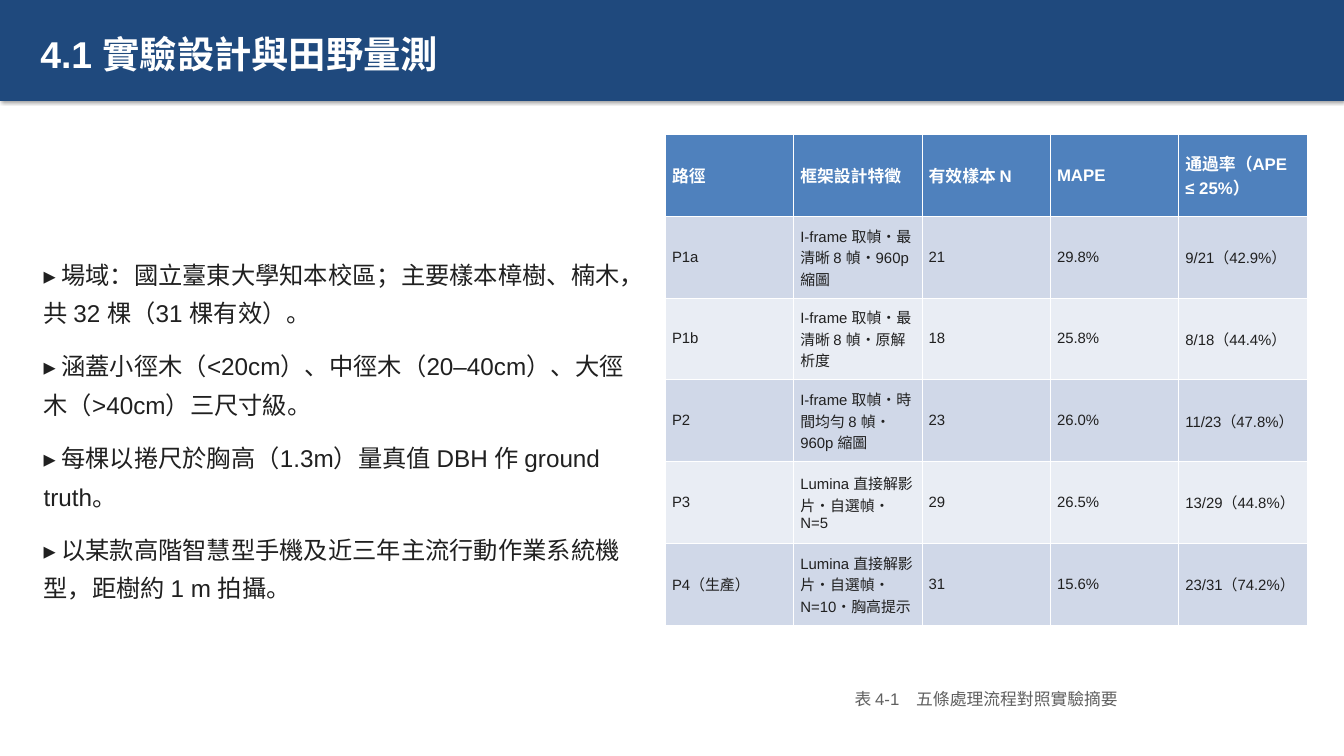
from lxml.etree import SubElement
from pptx import Presentation
from pptx.dml.color import RGBColor
from pptx.enum.text import MSO_ANCHOR, MSO_AUTO_SIZE, PP_ALIGN
from pptx.oxml.ns import qn
from pptx.util import Inches, Pt

NAVY, BLUE, WHITE = "1F497D", "4F81BD", "FFFFFF"
BANDS = ("D0D8E8", "E9EDF4")
INK, GRAY = "202020", "606060"

FINDINGS = [
    "▸ 場域：國立臺東大學知本校區；主要樣本樟樹、楠木，共 32 棵（31 棵有效）。",
    "▸ 涵蓋小徑木（<20cm）、中徑木（20–40cm）、大徑木（>40cm）三尺寸級。",
    "▸ 每棵以捲尺於胸高（1.3m）量真值 DBH 作 ground truth。",
    "▸ 以某款高階智慧型手機及近三年主流行動作業系統機型，距樹約 1 m 拍攝。",
]
PATHWAYS = [
    ("路徑", "框架設計特徵", "有效樣本 N", "MAPE", "通過率（APE ≤ 25%）"),
    ("P1a", "I-frame 取幀・最清晰 8 幀・960p 縮圖", "21", "29.8%", "9/21（42.9%）"),
    ("P1b", "I-frame 取幀・最清晰 8 幀・原解析度", "18", "25.8%", "8/18（44.4%）"),
    ("P2", "I-frame 取幀・時間均勻 8 幀・960p 縮圖", "23", "26.0%", "11/23（47.8%）"),
    ("P3", "Lumina 直接解影片・自選幀・N=5", "29", "26.5%", "13/29（44.8%）"),
    ("P4（生產）", "Lumina 直接解影片・自選幀・N=10・胸高提示", "31", "15.6%", "23/31（74.2%）"),
]


def rgb(value):
    return RGBColor.from_string(value)


class Deck:
    """Holds the text style and the current slide."""

    def __init__(self, width, height, font="Arial"):
        self.font = font
        self.presentation = Presentation()
        self.presentation.slide_width = Inches(width)
        self.presentation.slide_height = Inches(height)
        self.slide = self.presentation.slides.add_slide(self.presentation.slide_layouts[5])

    def style(self, paragraph, size, color, bold=False):
        paragraph.font.name = self.font
        paragraph.font.size = Pt(size)
        paragraph.font.color.rgb = rgb(color)
        paragraph.font.bold = bold

    def title(self, text, height):
        band = self.slide.shapes.title
        band.left, band.top = Inches(0), Inches(0)
        band.width, band.height = self.presentation.slide_width, Inches(height)
        band.fill.solid()
        band.fill.fore_color.rgb = rgb(NAVY)
        effects = SubElement(band.fill._xPr, qn("a:effectLst"))
        shadow = SubElement(effects, qn("a:outerShdw"), blurRad=str(Pt(3.1)),
                            dist=str(Pt(1.8)), dir="5400000", rotWithShape="0")
        shade = SubElement(shadow, qn("a:srgbClr"), val="000000")
        SubElement(shade, qn("a:alpha"), val="35000")
        frame = band.text_frame
        frame.text = text
        frame.auto_size = MSO_AUTO_SIZE.NONE
        frame.vertical_anchor = MSO_ANCHOR.MIDDLE
        frame.margin_left, frame.margin_top = Inches(0.6), Inches(0.15)
        frame.margin_right, frame.margin_bottom = Inches(0.1), Inches(0.05)
        heading = frame.paragraphs[0]
        heading.alignment = PP_ALIGN.LEFT
        self.style(heading, 40, WHITE, bold=True)

    def text(self, lines, left, top, width, height, size, color,
             anchor=MSO_ANCHOR.TOP, align=PP_ALIGN.LEFT, spacing=None, after=0):
        box = self.slide.shapes.add_textbox(Inches(left), Inches(top), Inches(width), Inches(height))
        frame = box.text_frame
        frame.word_wrap = True
        frame.vertical_anchor = anchor
        frame.text = "\n".join(lines)
        for paragraph in frame.paragraphs:
            paragraph.alignment = align
            paragraph.line_spacing = spacing
            paragraph.space_after = Pt(after)
            self.style(paragraph, size, color)

    def table(self, rows, left, top, width, height):
        grid = self.slide.shapes.add_table(
            len(rows), len(rows[0]), Inches(left), Inches(top), Inches(width), Inches(height)).table
        for r, row in enumerate(rows):
            header = r == 0
            for c, value in enumerate(row):
                cell = grid.cell(r, c)
                cell.text = value
                cell.vertical_anchor = MSO_ANCHOR.MIDDLE
                cell.fill.solid()
                cell.fill.fore_color.rgb = rgb(BLUE if header else BANDS[(r - 1) % 2])
                self.style(cell.text_frame.paragraphs[0], 18 if header else 16,
                           WHITE if header else INK, bold=header)


def main():
    deck = Deck(20, 11.25)
    deck.title("4.1 實驗設計與田野量測", 1.5)
    deck.text(FINDINGS, 0.55, 1.7, 8.95, 9.3, 26, INK,
              anchor=MSO_ANCHOR.MIDDLE, spacing=1.32, after=16)
    deck.table(PATHWAYS, 9.9, 2, 9.55, 7.3)
    deck.text(["表 4-1　五條處理流程對照實驗摘要"], 9.9, 10.2, 9.55, 0.6, 18, GRAY,
              align=PP_ALIGN.CENTER)
    deck.presentation.save("out.pptx")


if __name__ == "__main__":
    main()
